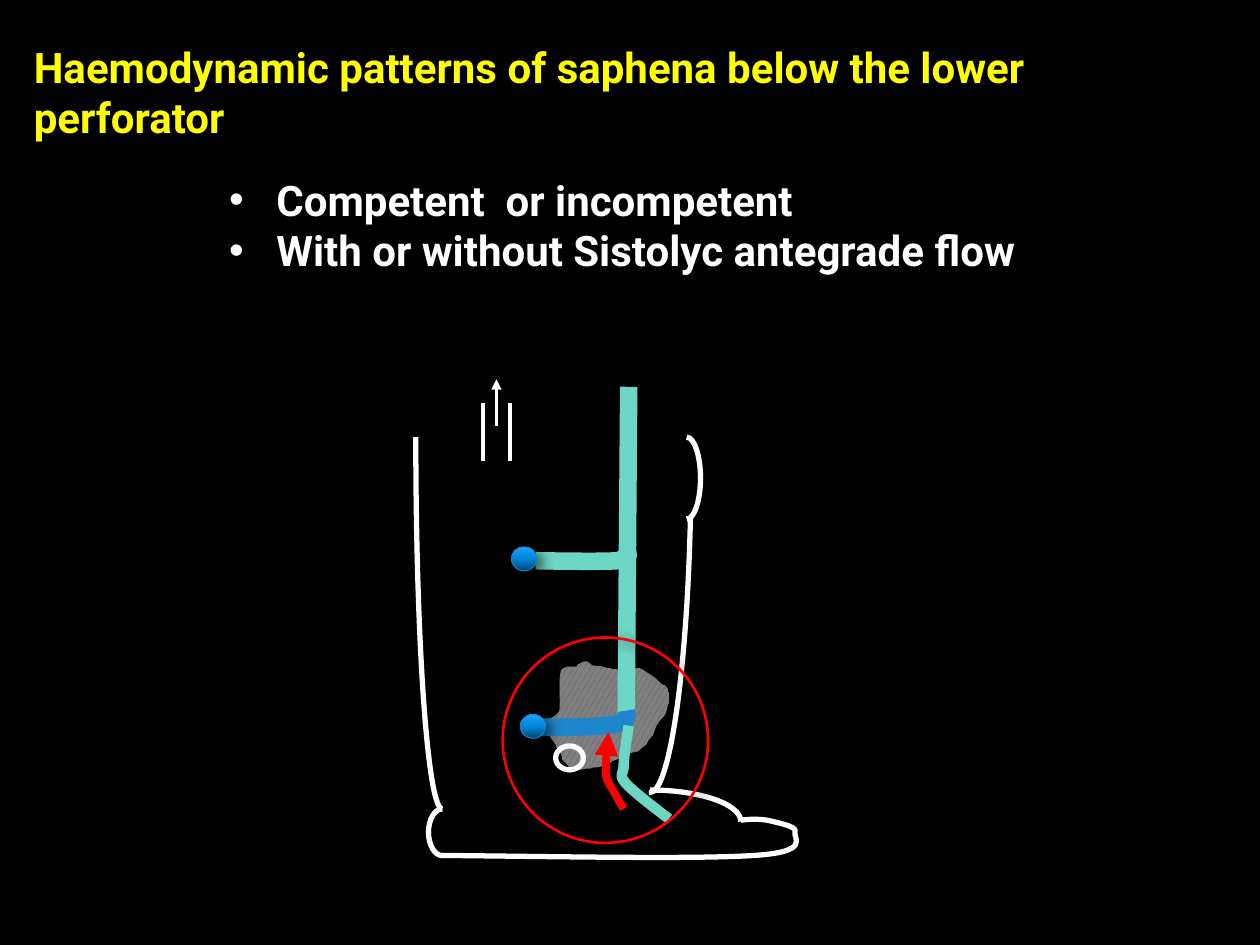
from copy import deepcopy
from lxml import etree
from pptx import Presentation
from pptx.dml.color import RGBColor
from pptx.enum.dml import MSO_PATTERN
from pptx.enum.shapes import MSO_CONNECTOR, MSO_SHAPE
from pptx.enum.text import MSO_ANCHOR, MSO_AUTO_SIZE
from pptx.oxml.ns import qn
from pptx.util import Inches, Pt

STRAIGHT, OVAL = MSO_CONNECTOR.STRAIGHT, MSO_SHAPE.OVAL
CONFETTI = MSO_PATTERN.LARGE_CONFETTI
TOP, GROW = MSO_ANCHOR.TOP, MSO_AUTO_SIZE.SHAPE_TO_FIT_TEXT

THEME = dict(
    font="Roboto", size=24, indent=27, bg="000000", title="FFFF00", body="FFFFFF",
    outline="FFFFFF", vein="6ED6C4", perforator="1D86CD", alert="FF0000",
    rim="1884CD", ball=[(0, "014573"), (0.5, "0285DD"), (1, "1AA3FF")],
    patch=("595959", "808080"),
    thin=1.5, medium=2.25, thick=3, arrow=4.5, branch=6, trunk=10, hair=0.5)

TITLE = "Haemodynamic patterns of saphena below the lower perforator"
BULLETS = ["Competent  or incompetent", "With or without Sistolyc antegrade flow"]

PATCH = [
    (4.5, 5.29), (4.48, 5.3, 4.45, 5.31, 4.45, 5.33),
    (4.43, 5.43, 4.45, 5.54, 4.44, 5.64), (4.43, 5.66, 4.41, 5.68, 4.39, 5.69),
    (4.35, 5.71), (4.35, 5.76, 4.35, 5.8, 4.36, 5.84),
    (4.37, 5.86, 4.4, 5.89, 4.41, 5.91), (4.44, 6, 4.4, 5.89, 4.45, 5.98),
    (4.49, 6.07, 4.41, 5.97, 4.51, 6.08), (4.52, 6.09, 4.52, 6.1, 4.53, 6.1),
    (4.57, 6.11), (4.6, 6.11, 4.62, 6.11, 4.65, 6.1),
    (4.66, 6.1, 4.67, 6.1, 4.68, 6.1),
    (4.7, 6.09, 4.72, 6.09, 4.74, 6.09), (4.79, 6.08, 4.79, 6.08, 4.83, 6.07),
    (4.84, 6.06, 4.84, 6.05, 4.86, 6.04), (4.87, 6.03, 4.88, 6.03, 4.89, 6.03),
    (4.91, 6.02, 4.93, 6.02, 4.94, 6.01),
    (4.96, 6, 4.96, 5.99, 4.98, 5.98), (4.99, 5.98, 5.01, 5.98, 5.03, 5.97),
    (5.04, 5.97, 5.05, 5.97, 5.07, 5.96), (5.07, 5.96, 5.08, 5.95, 5.09, 5.94),
    (5.1, 5.93, 5.12, 5.92, 5.13, 5.91), (5.14, 5.9, 5.14, 5.88, 5.15, 5.87),
    (5.16, 5.86, 5.17, 5.85, 5.18, 5.84), (5.21, 5.76),
    (5.22, 5.75, 5.22, 5.74, 5.23, 5.73), (5.26, 5.69, 5.25, 5.71, 5.28, 5.67),
    (5.32, 5.55, 5.27, 5.7, 5.3, 5.6), (5.31, 5.59, 5.31, 5.58, 5.31, 5.56),
    (5.31, 5.52, 5.32, 5.48, 5.28, 5.44), (5.27, 5.44, 5.25, 5.43, 5.24, 5.42),
    (5.2, 5.38, 5.23, 5.4, 5.14, 5.34), (5.09, 5.31, 5.12, 5.32, 5.07, 5.3),
    (4.95, 5.33, 5.02, 5.32, 4.87, 5.31), (4.78, 5.29, 4.89, 5.32, 4.78, 5.29),
    (4.66, 5.27, 4.85, 5.31, 4.7, 5.28), (4.68, 5.27, 4.67, 5.25, 4.66, 5.25),
    (4.64, 5.24, 4.59, 5.27, 4.58, 5.28), (4.58, 5.29)]
SHIN = [(5.15, 6.29), (5.15, 6.29, 5.16, 6.29, 5.16, 6.29),
        (5.31, 6.29, 5.45, 5.38, 5.48, 4.12)]
FRONT = [(5.45, 3.47, 5.56, 3.8), (5.45, 4.12, 5.56, 3.79), (5.16, 6.27, 5.88, 6.52)]
CALF = (3.51, 6.42, 3.3, 3.47)
HEEL = [(3.51, 6.42, 3.4, 6.61), (3.51, 6.79, 3.4, 6.6)]
SOLE = [
    (3.51, 6.79), (4.52, 6.8, 5.52, 6.82, 5.99, 6.79),
    (6.45, 6.76, 6.29, 6.65, 6.31, 6.6), (6.33, 6.56, 6.17, 6.53, 6.09, 6.51),
    (6.02, 6.5, 5.95, 6.5, 5.88, 6.51)]
UPPER_BRANCH = [(4.96, 4.34), (4.99, 4.39, 5.02, 4.43, 4.9, 4.45),
                (4.78, 4.46, 4.25, 4.45, 4.25, 4.45)]
LOWER_BRANCH = [(4.97, 5.64), (4.98, 5.69, 4.99, 5.73, 4.87, 5.75),
                (4.75, 5.78, 4.25, 5.77, 4.25, 5.77)]
FOOT_VEIN = [(4.99, 5.76), (4.97, 5.89, 4.95, 6.01, 4.95, 6.09),
             (4.94, 6.16, 4.91, 6.15, 4.97, 6.22), (5.03, 6.29, 5.31, 6.5, 5.31, 6.5)]
FLOW = [(4.83, 5.81), (4.82, 5.91, 4.81, 6.02, 4.81, 6.08),
        (4.81, 6.14, 4.8, 6.13, 4.82, 6.19), (4.85, 6.25, 4.95, 6.42, 4.95, 6.42)]

STEPS = 12
ARC = 0.55

prs = Presentation()
prs.slide_width, prs.slide_height = Inches(10), Inches(7.5)
slide = prs.slides.add_slide(prs.slide_layouts[6])
shapes = slide.shapes


def rgb(name):
    return RGBColor.from_string(THEME.get(name, name))


def set_line(sp, color, width, head=False):
    sp.line.color.rgb = rgb(color)
    sp.line.width = Pt(THEME[width])
    if head:
        ln = sp.line._get_or_add_ln()
        etree.SubElement(ln, qn("a:headEnd"), type="triangle")


def extent(path):
    points = [path[0]]
    for seg in path[1:]:
        start, end = points[-1], seg[-2:]
        a, b = (seg[:2], seg[2:4]) if len(seg) == 6 else (start, end)
        for i in range(1, STEPS + 1):
            t = i / STEPS
            u = 1 - t
            points.append(tuple(
                u**3 * p + 3 * u * u * t * q + 3 * u * t * t * r + t**3 * s
                for p, q, r, s in zip(start, a, b, end)))
    return [(Inches(x), Inches(y)) for x, y in points]


def outline(path, closed=False):
    points = extent(path)
    fb = shapes.build_freeform(*points[0])
    fb.add_line_segments(points[1:], close=closed)
    sp = fb.convert_to_shape()
    sp.shadow.inherit = False
    geom = sp._element.spPr.find(".//" + qn("a:path"))
    for child in list(geom):
        geom.remove(child)
    for i, seg in enumerate(path):
        tag = "a:cubicBezTo" if len(seg) == 6 else "a:lnTo" if i else "a:moveTo"
        step = etree.SubElement(geom, qn(tag))
        for x, y in zip(seg[::2], seg[1::2]):
            etree.SubElement(step, qn("a:pt"), x=str(Inches(x) - sp.left),
                             y=str(Inches(y) - sp.top))
    if closed:
        etree.SubElement(geom, qn("a:close"))
    return sp


def curve(path, color, width, head=False):
    sp = outline(path)
    sp.fill.background()
    set_line(sp, color, width, head)


def quarter(x0, y0, x1, y1):
    dx, dy = ARC * (x1 - x0), ARC * (y1 - y0)
    curve([(x0, y0), (x0 + dx, y0, x1, y1 - dy, x1, y1)], "outline", "thick")


def straight(x0, y0, x1, y1, color, width, head=False):
    cn = shapes.add_connector(STRAIGHT, *map(Inches, (x0, y0, x1, y1)))
    set_line(cn, color, width, head)
    etree.SubElement(cn._element.spPr, qn("a:effectLst"))


def oval(x, y, w, h, color, width, shadow=False):
    sp = shapes.add_shape(OVAL, *map(Inches, (x, y, w, h)))
    sp.fill.background()
    set_line(sp, color, width)
    sp.shadow.inherit = False
    if shadow:
        effects = sp._element.spPr.find(qn("a:effectLst"))
        outer = etree.SubElement(effects, qn("a:outerShdw"), blurRad=str(Pt(7)),
                                 dist=str(Pt(4)), dir="2100000", rotWithShape="0")
        clr = etree.SubElement(outer, qn("a:srgbClr"), val=THEME["bg"])
        etree.SubElement(clr, qn("a:alpha"), val="55000")
    return sp


def ball(x, y):
    sp = oval(x, y, 0.2, 0.19, "rim", "hair", shadow=True)
    sp.fill.gradient()
    sp.fill.gradient_angle = 90
    stops = sp._element.spPr.find(".//" + qn("a:gsLst"))
    stops.append(deepcopy(stops[-1]))
    for stop, (pos, color) in zip(sp.fill.gradient_stops, THEME["ball"]):
        stop.position = pos
        stop.color.rgb = rgb(color)


def text(x, y, w, h, lines, color, wrap, bullets=False):
    tf = shapes.add_textbox(*map(Inches, (x, y, w, h))).text_frame
    tf.word_wrap, tf.auto_size, tf.vertical_anchor = wrap, GROW, TOP
    for i, line in enumerate(lines):
        p = tf.add_paragraph() if i else tf.paragraphs[0]
        if bullets:
            pPr = p._p.get_or_add_pPr()
            pPr.set("marL", str(Pt(THEME["indent"])))
            pPr.set("indent", str(-Pt(THEME["indent"])))
            etree.SubElement(pPr, qn("a:buFont"), typeface="Arial")
            etree.SubElement(pPr, qn("a:buChar"), char="•")
        r = p.add_run()
        r.text = line
        r.font.name, r.font.size, r.font.bold = THEME["font"], Pt(THEME["size"]), True
        r.font.color.rgb = rgb(color)


slide.background.fill.solid()
slide.background.fill.fore_color.rgb = rgb("bg")

patch = outline(PATCH, closed=True)
patch.fill.patterned()
patch.fill.pattern = CONFETTI
patch.fill.fore_color.rgb, patch.fill.back_color.rgb = map(rgb, THEME["patch"])
patch.line.fill.background()

curve(SHIN, "outline", "thick")
for arc in FRONT:
    quarter(*arc)
curve(SOLE, "outline", "thick")
quarter(*CALF)
oval(4.41, 5.92, 0.22, 0.19, "outline", "thick")
for x in (3.83, 4.05):
    straight(x, 3.2, x, 3.66, "outline", "medium")
straight(3.94, 3.01, 3.94, 3.38, "outline", "thin", head=True)
for arc in HEEL:
    quarter(*arc)

straight(4.99, 3.07, 4.97, 5.7, "vein", "trunk")
curve(UPPER_BRANCH, "vein", "trunk")
ball(4.06, 4.34)
curve(LOWER_BRANCH, "perforator", "trunk")
ball(4.13, 5.67)
curve(FOOT_VEIN, "vein", "branch")
curve(FLOW, "alert", "arrow", head=True)
oval(3.99, 5.06, 1.63, 1.63, "alert", "thin", shadow=True)

text(0.17, 0.28, 9.62, 0.5, [TITLE], "title", wrap=True)
text(1.72, 4 / 3, 6.53, 0.91, BULLETS, "body", wrap=False, bullets=True)

prs.save("out.pptx")
